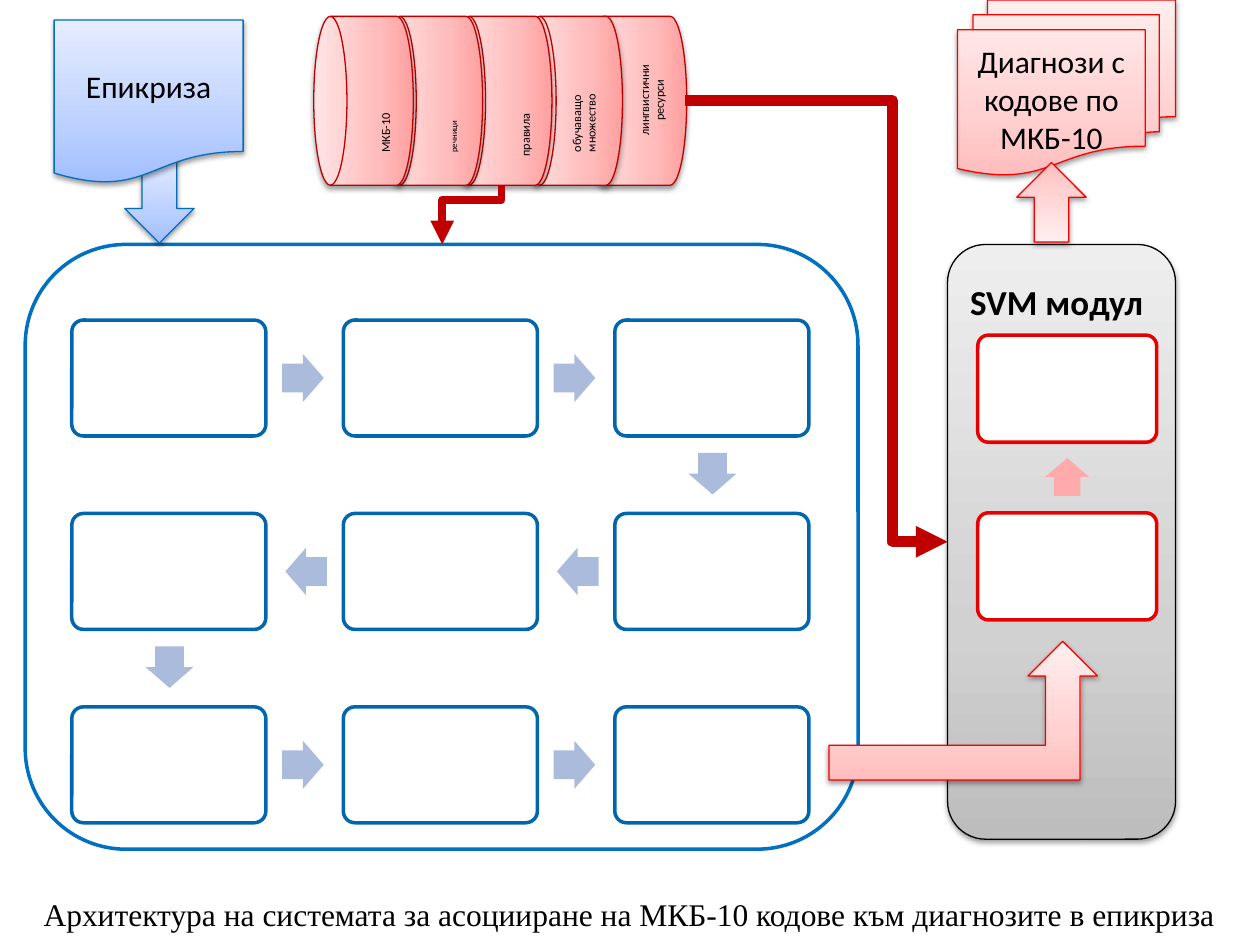
from typing import NamedTuple, Optional

from pptx import Presentation
from pptx.dml.color import RGBColor
from pptx.enum.shapes import MSO_CONNECTOR, MSO_SHAPE
from pptx.enum.text import MSO_ANCHOR, PP_ALIGN
from pptx.oxml import parse_xml
from pptx.oxml.ns import nsdecls, qn
from pptx.util import Inches, Pt

BLACK = RGBColor(0, 0, 0)
WHITE = RGBColor(255, 255, 255)
BLUE = RGBColor(0x00, 0x70, 0xC0)
NAVY = RGBColor(0x00, 0x66, 0xAE)
STEEL = RGBColor(0xAB, 0xBB, 0xDC)
RED = RGBColor(0xE7, 0x00, 0x00)
PINK = RGBColor(0xFF, 0xAB, 0xAB)
DARK = RGBColor(0xC0, 0x00, 0x00)

WIDE, HIGH = Inches(10), Inches(7.5)
COL, ROW = WIDE / 100, HIGH / 75


class Box(NamedTuple):
    x: float
    y: float
    w: float
    h: float


class Shade(NamedTuple):
    stops: tuple[RGBColor, RGBColor, RGBColor]
    line: RGBColor
    angle: int = 270


class Drum(NamedTuple):
    x: float
    text: str
    label: Box
    size: float = 7
    align: PP_ALIGN = PP_ALIGN.LEFT


def shade(names: str, line: str, angle: int = 270) -> Shade:
    stops = tuple(RGBColor.from_string(name) for name in names.split())
    return Shade(stops, RGBColor.from_string(line), angle)


SKY = shade("A0BEFF BCD0FF E5EDFF", "006EBC")
ROSE = shade("FFBDBD FFD1D1 FFEEEE", "F90000")
GRAY = shade("BDBDBD D1D1D1 EEEEEE", "000000")
WINE = shade("FFA0A0 FFBCBC FFE5E5", "BC0000", 0)

DRUMS = (
    Drum(46.6, "лингвистични ресурси", Box(46.5, 6.4, 10.2, 3.1), align=PP_ALIGN.CENTER),
    Drum(41.5, "обучаващо\nмножество", Box(41.1, 6.4, 10.2, 3.1)),
    Drum(35.9, "правила", Box(36.9, 8.1, 9, 1.6)),
    Drum(30.4, "речници", Box(31.8, 7.7, 8.7, 2.1), 5),
    Drum(24.9, "МКБ-10", Box(25.8, 7.7, 9.1, 1.7)),
)


def place(box: Box) -> tuple[int, int, int, int]:
    return (round(box.x * COL), round(box.y * ROW),
            round(box.w * COL), round(box.h * ROW))


def write(shape, text: str, size: float, align=PP_ALIGN.CENTER,
          font: str = "Calibri", bold: bool = False, wrap: bool = True) -> None:
    frame = shape.text_frame
    frame.word_wrap = wrap
    frame.text = text
    for para in frame.paragraphs:
        para.alignment = align
        for run in para.runs:
            run.font.name = font
            run.font.size = Pt(size)
            run.font.bold = bold
            run.font.color.rgb = BLACK


def label(slide, box: Box, text: str, size: float, turn: float = 0, **style):
    shape = slide.shapes.add_textbox(*place(box))
    shape.rotation = turn
    write(shape, text, size, **style)
    return shape


def plain(slide, kind, box: Box, fill: RGBColor, line: Optional[RGBColor] = None,
          turn: float = 0, ratios: tuple = ()):
    shape = slide.shapes.add_shape(kind, *place(box))
    shape.rotation = turn
    shape.shadow.inherit = False
    shape.fill.solid()
    shape.fill.fore_color.rgb = fill
    if line is None:
        shape.line.fill.background()
    else:
        shape.line.color.rgb = line
        shape.line.width = Pt(2)
    for spot, ratio in enumerate(ratios):
        shape.adjustments[spot] = ratio
    return shape


def glossy(slide, kind, box: Box, tone: Shade, turn: float = 0):
    shape = plain(slide, kind, box, WHITE, tone.line, turn)
    shape.line.width = Pt(0.75)
    props = shape._element.spPr
    stops = "".join(f'<a:gs pos="{spot}"><a:srgbClr val="{hue}"/></a:gs>'
                    for spot, hue in zip((0, 35000, 100000), tone.stops))
    props.replace(props.find(qn("a:solidFill")), parse_xml(
        f'<a:gradFill {nsdecls("a")} rotWithShape="1"><a:gsLst>{stops}</a:gsLst>'
        f'<a:lin ang="{tone.angle * 60000}" scaled="0"/></a:gradFill>'))
    props.find(qn("a:effectLst")).append(parse_xml(
        f'<a:outerShdw {nsdecls("a")} blurRad="{Pt(3.1)}" dist="{Pt(1.6)}" '
        'dir="5400000" rotWithShape="0"><a:srgbClr val="000000">'
        '<a:alpha val="38000"/></a:srgbClr></a:outerShdw>'))
    return shape


def elbow(slide, box: Box, width: float, bend: float, turn: int = 0) -> None:
    x, y, w, h = place(box)
    link = slide.shapes.add_connector(MSO_CONNECTOR.ELBOW, x, y, x + w, y + h)
    link.line.color.rgb = DARK
    link.line.width = Pt(width)
    props = link._element.spPr
    props.find(qn("a:xfrm")).set("rot", str(turn * 60000))
    geom = props.find(qn("a:prstGeom"))
    for old in list(geom):
        geom.remove(old)
    geom.append(parse_xml(f'<a:avLst {nsdecls("a")}><a:gd name="adj1" '
                          f'fmla="val {round(bend * 100000)}"/></a:avLst>'))
    props.find(qn("a:ln")).append(parse_xml(f'<a:tailEnd {nsdecls("a")} type="triangle"/>'))
    props.append(parse_xml(f'<a:effectLst {nsdecls("a")}/>'))


def card(slide, box: Box, line: RGBColor) -> None:
    plain(slide, MSO_SHAPE.ROUNDED_RECTANGLE, box, WHITE, line, ratios=(0.1,))


def arrow(slide, box: Box, fill: RGBColor, turn: float) -> None:
    plain(slide, MSO_SHAPE.RIGHT_ARROW, box, fill, turn=turn, ratios=(0.6, 0.5))


def snake(slide) -> None:
    for step in range(9):
        row, spot = divmod(step, 3)
        back = row % 2 == 1
        x = 5.7 + 21.55 * (2 - spot if back else spot)
        y = 25.4 + 15.35 * row
        card(slide, Box(x, y, 15.4, 9.2), NAVY)
        if step == 8:
            continue
        if spot == 2:
            dx, dy, turn = 6.1, 10.3, 90
        elif back:
            dx, dy, turn = -4.6, 2.7, 180
        else:
            dx, dy, turn = 16.7, 2.7, 0
        arrow(slide, Box(x + dx, y + dy, 3.3, 3.8), STEEL, turn)


def build() -> None:
    deck = Presentation()
    deck.slide_width, deck.slide_height = WIDE, HIGH
    slide = deck.slides.add_slide(deck.slide_layouts[6])

    for drum in DRUMS:
        glossy(slide, MSO_SHAPE.FLOWCHART_DIRECT_ACCESS_STORAGE,
               Box(drum.x, 1.3, 7.9, 13.4), WINE, 180)
        label(slide, drum.label, drum.text, drum.size, 270, align=drum.align)

    plain(slide, MSO_SHAPE.ROUNDED_RECTANGLE, Box(2, 19.4, 66.1, 48), WHITE, BLUE)
    snake(slide)

    glossy(slide, MSO_SHAPE.DOWN_ARROW, Box(9.9, 12.2, 5.5, 7.1), SKY)
    note = glossy(slide, MSO_SHAPE.FLOWCHART_DOCUMENT, Box(4.3, 1.6, 15, 13), SKY)
    write(note, "Епикриза", 18)

    glossy(slide, MSO_SHAPE.ROUNDED_RECTANGLE, Box(75.2, 19.4, 18.1, 47.2), GRAY)
    label(slide, Box(76, 21.8, 16.5, 4.4), "SVM модул", 20,
          align=PP_ALIGN.LEFT, bold=True)
    for y in (26.6, 40.7):
        card(slide, Box(77.6, y, 14.2, 8.5), RED)
    arrow(slide, Box(83.2, 36.1, 3, 3.5), PINK, 270)
    glossy(slide, MSO_SHAPE.BENT_UP_ARROW, Box(65.8, 50.9, 21.3, 11), ROSE)
    pile = glossy(slide, MSO_SHAPE.FLOWCHART_MULTIDOCUMENT, Box(76, 0, 17.3, 13.9), ROSE)
    write(pile, "Диагнози с кодове по МКБ-10", 18)
    glossy(slide, MSO_SHAPE.DOWN_ARROW, Box(80.7, 12.9, 5.5, 6.3), ROSE, 180)

    elbow(slide, Box(54.4, 8, 20.8, 35), 6, 0.79)
    elbow(slide, Box(35.1, 14.7, 4.7, 4.7), 4.5, 0.25, 90)

    title = label(slide, Box(2, 70.5, 95.9, 4),
                  "Архитектура на системата за асоцииране на МКБ-10 кодове "
                  "към диагнозите в епикриза", 18,
                  font="Times New Roman", wrap=False)
    title.text_frame.vertical_anchor = MSO_ANCHOR.MIDDLE
    deck.save("out.pptx")


if __name__ == "__main__":
    build()
